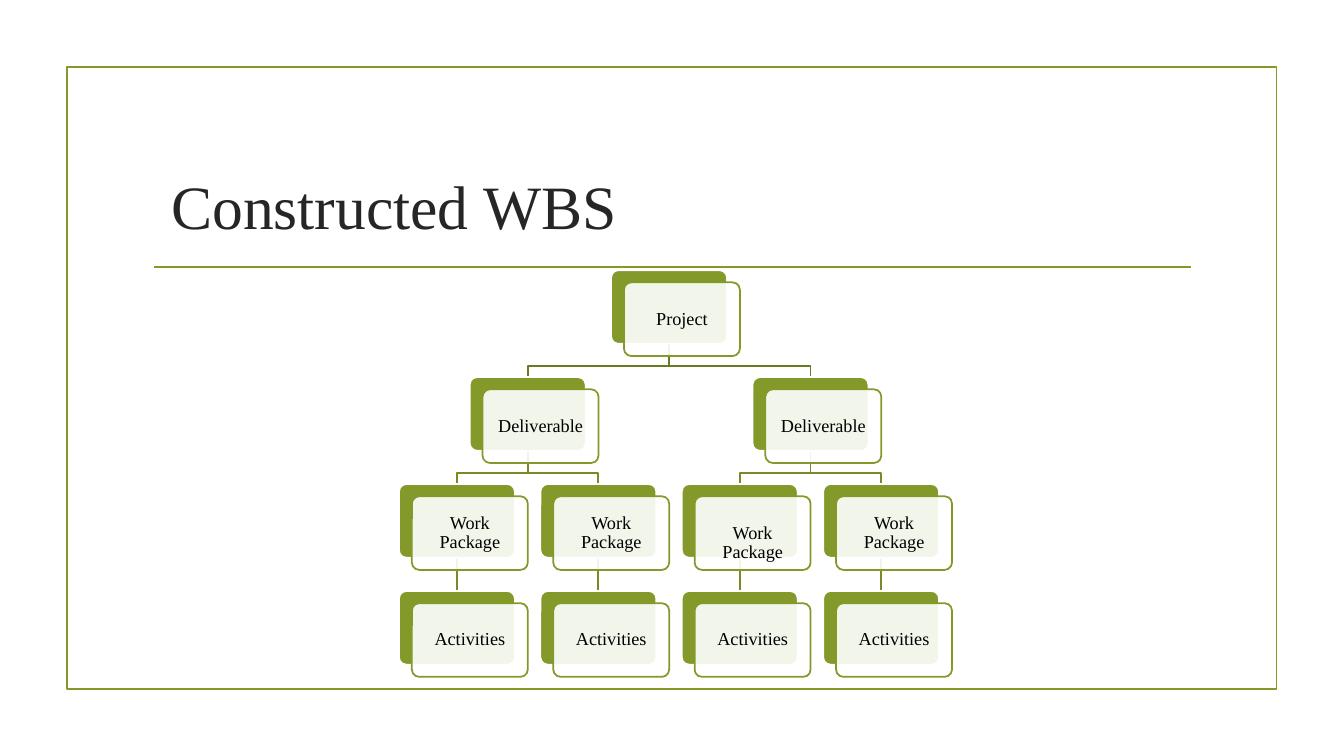
"""Build the work breakdown structure slide."""
from lxml import etree
from pptx import Presentation
from pptx.dml.color import RGBColor
from pptx.enum.shapes import MSO_CONNECTOR, MSO_SHAPE
from pptx.enum.text import MSO_ANCHOR, PP_ALIGN
from pptx.oxml.ns import qn
from pptx.util import Pt

RECT, ROUNDED = MSO_SHAPE.RECTANGLE, MSO_SHAPE.ROUNDED_RECTANGLE
STRAIGHT = MSO_CONNECTOR.STRAIGHT
MIDDLE, BOTTOM = MSO_ANCHOR.MIDDLE, MSO_ANCHOR.BOTTOM
LEFT, CENTER = PP_ALIGN.LEFT, PP_ALIGN.CENTER

GREEN = RGBColor(0x83, 0x99, 0x2A)
UPPER_LINK = RGBColor(0x69, 0x7B, 0x22)
LOWER_LINK = RGBColor(0x77, 0x8B, 0x26)
WHITE = RGBColor(0xFF, 0xFF, 0xFF)
BLACK = RGBColor(0, 0, 0)
TITLE_GREY = RGBColor(0x26, 0x26, 0x26)

FONT = "Times New Roman"
LINE_WIDTH = 1.25
TREE_LEFT, TREE_TOP = 326.4, 193
COL_STEP, ROW_STEP = 101, 76.4
BOX_W, BOX_H = 82.8, 52.6
CARD_DX, CARD_DY = 9.2, 8.7
ELBOW_DROP = 15.9
INSET = 3.6

# Each node: label, column of its centre, row, index of its parent, extra top inset
NODES = [
    ("Project", 1.5, 0, None, 0),
    ("Deliverable", 0.5, 1, 0, 0),
    ("Deliverable", 2.5, 1, 0, 0),
    ("Work Package", 0, 2, 1, 0),
    ("Work Package", 1, 2, 1, 0),
    ("Work Package", 2, 2, 2, 14.4),
    ("Work Package", 3, 2, 2, 0),
    ("Activities", 0, 3, 3, 0),
    ("Activities", 1, 3, 4, 0),
    ("Activities", 2, 3, 5, 0),
    ("Activities", 3, 3, 6, 0),
]


def set_text(s, text, size, color, align, anchor, margins, spacing=1.0):
    """Fill a shape with one formatted paragraph."""
    tf = s.text_frame
    tf.word_wrap = True
    tf.vertical_anchor = anchor
    tf.margin_left, tf.margin_top, tf.margin_right, tf.margin_bottom = map(Pt, margins)
    p = tf.paragraphs[0]
    p.alignment = align
    p.line_spacing = spacing
    r = p.add_run()
    r.text = text
    r.font.name = FONT
    r.font.size = Pt(size)
    r.font.color.rgb = color


def set_line(s, color):
    """Give a shape or connector its outline."""
    s.line.color.rgb = color
    s.line.width = Pt(LINE_WIDTH)


def add_box(slide, kind, x, y, w, h, line, fill=None, alpha=None):
    """Add a preset shape with an optional, possibly translucent, fill."""
    s = slide.shapes.add_shape(kind, Pt(x), Pt(y), Pt(w), Pt(h))
    s.shadow.inherit = False
    if kind == ROUNDED:
        s.adjustments[0] = 0.1
    if fill is None:
        s.fill.background()
    else:
        s.fill.solid()
        s.fill.fore_color.rgb = fill
    if alpha is not None:
        color = s.fill._xPr.find(qn("a:solidFill"))[0]
        etree.SubElement(color, qn("a:alpha")).set("val", str(alpha * 1000))
    set_line(s, line)
    return s


def add_line(slide, x1, y1, x2, y2, color):
    """Add a straight line without a shadow."""
    s = slide.shapes.add_connector(STRAIGHT, Pt(x1), Pt(y1), Pt(x2), Pt(y2))
    set_line(s, color)
    etree.SubElement(s._element.spPr, qn("a:effectLst"))


def add_elbow(slide, x1, y1, x2, y2, color):
    """Add an open bent line from a parent down to its child."""
    bend = y1 + ELBOW_DROP
    builder = slide.shapes.build_freeform(Pt(x1), Pt(y1))
    builder.add_line_segments(
        [(Pt(x), Pt(y)) for x, y in ((x1, bend), (x2, bend), (x2, y2))], close=False)
    s = builder.convert_to_shape()
    s.shadow.inherit = False
    s.fill.background()
    set_line(s, color)


def node_position(node):
    """Return the centre x and the top of a node."""
    return TREE_LEFT + node[1] * COL_STEP, TREE_TOP + node[2] * ROW_STEP


def add_link(slide, parent, child):
    """Join a child node to its parent."""
    x1, top = node_position(parent)
    x2, y2 = node_position(child)
    color = UPPER_LINK if child[2] == 1 else LOWER_LINK
    draw = add_line if x1 == x2 else add_elbow
    draw(slide, x1, top + BOX_H, x2, y2, color)


def add_node(slide, node):
    """Add a green box with a translucent labelled card over it."""
    center, y = node_position(node)
    x = center - BOX_W / 2
    add_box(slide, ROUNDED, x, y, BOX_W, BOX_H, WHITE, GREEN)
    card = add_box(slide, ROUNDED, x + CARD_DX, y + CARD_DY, BOX_W, BOX_H, GREEN, WHITE, 90)
    set_text(card, node[0], 13, BLACK, CENTER, MIDDLE,
             (INSET, INSET + node[4], INSET, INSET), spacing=0.9)


def add_title(slide, text):
    """Place and format the title placeholder."""
    s = slide.shapes.title
    s.left, s.top, s.width, s.height = Pt(80), Pt(52), Pt(803), Pt(128)
    set_text(s, text, 44, TITLE_GREY, LEFT, BOTTOM, (42.4, 0, 7.2, 7.2))


def main():
    """Build and save the slide."""
    prs = Presentation()
    prs.slide_width, prs.slide_height = Pt(960), Pt(540)
    slide = prs.slides.add_slide(prs.slide_layouts[5])
    add_box(slide, RECT, 47.8, 48, 864, 444.2, GREEN)
    add_line(slide, 110, 190.8, 850.5, 190.8, GREEN)
    add_title(slide, "Constructed WBS")
    for node in NODES:
        if node[3] is not None:
            add_link(slide, NODES[node[3]], node)
    for node in NODES:
        add_node(slide, node)
    prs.save("out.pptx")


if __name__ == "__main__":
    main()
